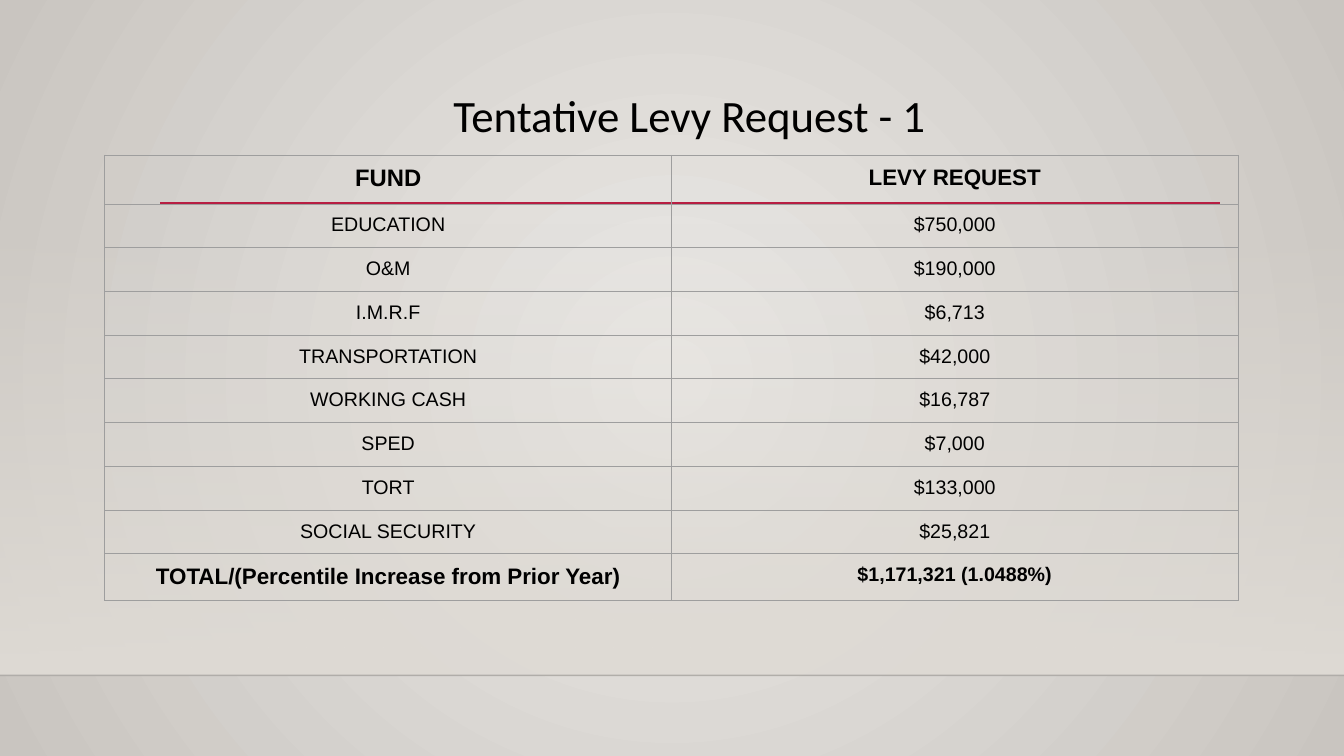
from lxml import etree
from pptx import Presentation
from pptx.dml.color import RGBColor
from pptx.enum.shapes import MSO_CONNECTOR, MSO_SHAPE
from pptx.enum.text import MSO_ANCHOR, PP_ALIGN
from pptx.oxml import parse_xml
from pptx.oxml.ns import nsdecls, qn
from pptx.util import Inches, Pt

LEVIES = [
    ("EDUCATION", "$750,000"),
    ("O&M", "$190,000"),
    ("I.M.R.F", "$6,713"),
    ("TRANSPORTATION", "$42,000"),
    ("WORKING CASH", "$16,787"),
    ("SPED", "$7,000"),
    ("TORT", "$133,000"),
    ("SOCIAL SECURITY", "$25,821"),
]
HEADER = ("FUND", "LEVY REQUEST")
TOTAL = ("TOTAL/(Percentile Increase from Prior Year)", "$1,171,321 (1.0488%)")


def color(hex_string):
    return RGBColor.from_string(hex_string)


def set_opacity(element, percent):
    """Make the first colour inside the element partly transparent."""
    rgb = next(element.iter(qn("a:srgbClr")))
    etree.SubElement(rgb, qn("a:alpha"), val=str(percent * 1000))


class SlideBuilder:
    text_color = "000000"
    border_color = "9E9E9E"
    table_font = "Arial"
    title_font = "Calibri"

    def __init__(self, slide):
        self.slide = slide

    def gradient(self, fill, colors):
        fill.gradient()
        for stop, hex_string in zip(fill.gradient_stops, colors):
            stop.color.rgb = color(hex_string)

    def background(self, center, edge):
        """Fill the background with a gradient that spreads from the middle."""
        self.gradient(self.slide.background.fill, (center, edge))
        gradient = next(self.slide.element.iter(qn("a:gradFill")))
        gradient.replace(gradient.find(qn("a:lin")), parse_xml(
            f'<a:path {nsdecls("a")} path="circle">'
            '<a:fillToRect l="50000" t="50000" r="50000" b="50000"/></a:path>'))

    def fading_band(self, left, top, width, height, hex_string):
        """Add a rectangle that fades in from top to bottom."""
        shape = self.slide.shapes.add_shape(
            MSO_SHAPE.RECTANGLE, Inches(left), Inches(top), Inches(width), Inches(height))
        shape.shadow.inherit = False
        shape.line.fill.background()
        self.gradient(shape.fill, (hex_string, hex_string))
        shape.fill.gradient_angle = 270
        set_opacity(next(shape.element.iter(qn("a:gsLst"))), 0)

    def rule(self, left, right, top, hex_string, width, opacity=100):
        """Add a horizontal line."""
        line = self.slide.shapes.add_connector(
            MSO_CONNECTOR.STRAIGHT, Inches(left), Inches(top), Inches(right), Inches(top))
        line.line.color.rgb = color(hex_string)
        line.line.width = Pt(width)
        properties = line.element.spPr
        etree.SubElement(properties, qn("a:effectLst"))
        if opacity < 100:
            set_opacity(properties, opacity)

    def centered_text(self, text_frame, text, font_name, size, bold=False):
        text_frame.text = text
        paragraph = text_frame.paragraphs[0]
        paragraph.alignment = PP_ALIGN.CENTER
        font = paragraph.runs[0].font
        font.name = font_name
        font.size = Pt(size)
        font.bold = bold
        font.color.rgb = color(self.text_color)
        return paragraph

    def title(self, left, top, width, height, text):
        box = self.slide.shapes.add_textbox(
            Inches(left), Inches(top), Inches(width), Inches(height))
        box.text_frame.word_wrap = True
        box.text_frame.vertical_anchor = MSO_ANCHOR.TOP
        paragraph = self.centered_text(box.text_frame, text, self.title_font, 32)
        paragraph.line_spacing = 0.9

    def cell(self, cell, text, size, bold):
        cell.margin_left = cell.margin_right = Inches(0.1)
        cell.margin_top = cell.margin_bottom = Inches(0.1)
        self.centered_text(cell.text_frame, text, self.table_font, size, bold)
        properties = cell._tc.get_or_add_tcPr()
        for side in ("lnL", "lnR", "lnT", "lnB"):
            properties.append(parse_xml(
                f'<a:{side} {nsdecls("a")} w="{Pt(0.75)}"><a:solidFill>'
                f'<a:srgbClr val="{self.border_color}"/></a:solidFill></a:{side}>'))
        cell.fill.background()

    def table(self, left, top, width, row_height, rows):
        """Add a table; each row is its texts, its text sizes and whether it is bold."""
        columns = len(rows[0][0])
        table = self.slide.shapes.add_table(
            len(rows), columns, Inches(left), Inches(top),
            Inches(width), Inches(row_height * len(rows))).table
        table.first_row = table.horz_banding = False
        for row_index, (texts, sizes, bold) in enumerate(rows):
            for column, (text, size) in enumerate(zip(texts, sizes)):
                self.cell(table.cell(row_index, column), text, size, bold)


def main():
    presentation = Presentation()
    presentation.slide_width = Inches(13.33)
    presentation.slide_height = Inches(7.5)
    builder = SlideBuilder(presentation.slides.add_slide(presentation.slide_layouts[6]))

    builder.background("EBE9E6", "C9C5C0")
    builder.fading_band(0, 2.21, 13.33, 4.49, "DFDBD5")
    builder.rule(0, 13.33, 6.7, "000001", 1, opacity=20)
    builder.rule(1.59, 12.1, 2.02, "B71E42", 2.5)
    builder.title(1.59, 0.88, 10.5, 1.15, "Tentative Levy Request - 1")
    rows = [(HEADER, (17, 16), True)]
    rows += [(levy, (14, 14), False) for levy in LEVIES]
    rows.append((TOTAL, (16, 14), True))
    builder.table(1.04, 1.54, 11.24, 0.42, rows)

    presentation.save("out.pptx")


if __name__ == "__main__":
    main()
